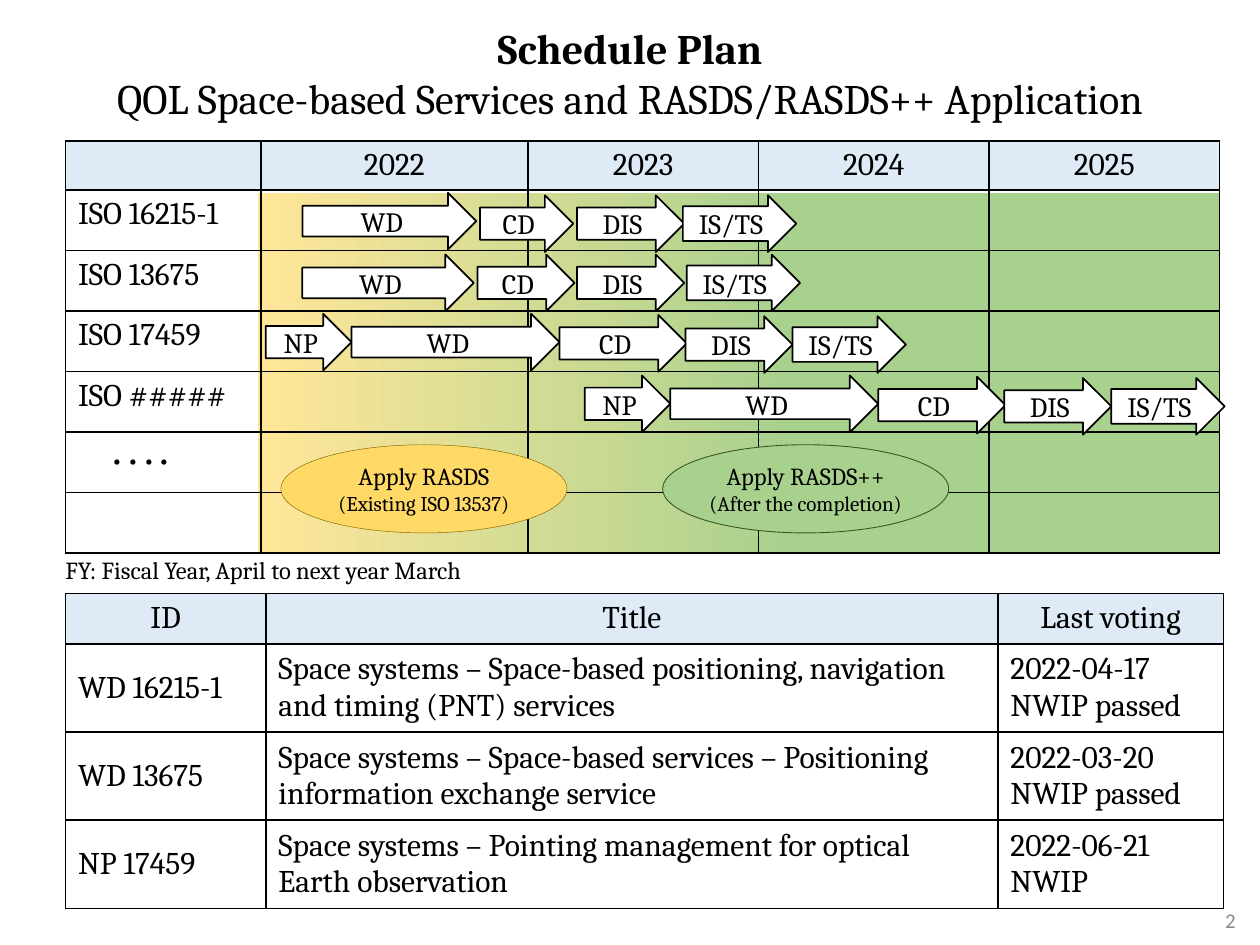
from lxml import etree
from pptx import Presentation
from pptx.dml.color import RGBColor
from pptx.enum.shapes import MSO_SHAPE
from pptx.enum.text import MSO_ANCHOR, MSO_AUTO_SIZE, PP_ALIGN
from pptx.oxml.ns import qn
from pptx.util import Inches, Pt

LEFT, CENTER = PP_ALIGN.LEFT, PP_ALIGN.CENTER
TOP, MIDDLE = MSO_ANCHOR.TOP, MSO_ANCHOR.MIDDLE
RECT, OVAL, ARROW = MSO_SHAPE.RECTANGLE, MSO_SHAPE.OVAL, MSO_SHAPE.RIGHT_ARROW
FONT, BLACK, GREEN, HEADER = "Cambria", "000000", "A9D18E", "DEEBF7"

# Content
TITLE = ["Schedule Plan", "QOL Space-based Services and RASDS/RASDS++ Application"]
SCHEDULE = [["", "2022", "2023", "2024", "2025"]] + [
    [name, "", "", "", ""] for name in
    ("ISO 16215-1", "ISO 13675", "ISO 17459", "ISO #####", "　････", "")]
VOTING = [
    ["ID", "Title", "Last voting"],
    ["WD 16215-1", "Space systems – Space-based positioning, navigation and timing (PNT) services",
     "2022-04-17\nNWIP passed"],
    ["WD 13675", "Space systems – Space-based services – Positioning information exchange service",
     "2022-03-20\nNWIP passed"],
    ["NP 17459", "Space systems – Pointing management for optical Earth observation",
     "2022-06-21\nNWIP"],
]
NOTE = "FY: Fiscal Year, April to next year March"

# Phase arrows: label, left, top, width
FULL_CYCLE = [("NP", 2.11, 2.49, 0.68), ("WD", 2.79, 2.49, 1.65), ("CD", 4.44, 2.5, 1.01),
              ("DIS", 5.44, 2.51, 0.85), ("IS/TS", 6.29, 2.51, 0.9)]
PHASES = [
    ("WD", 2.4, 1.53, 1.38), ("CD", 3.81, 1.55, 0.74),
    ("DIS", 4.58, 1.55, 0.85), ("IS/TS", 5.42, 1.55, 0.9),
    ("WD", 2.4, 2.02, 1.36), ("CD", 3.79, 2.02, 0.77),
    ("DIS", 4.58, 2.02, 0.85), ("IS/TS", 5.45, 2.02, 0.9),
] + FULL_CYCLE + [(label, x + 2.53, y + 0.49, w) for label, x, y, w in FULL_CYCLE]
SHAFT = {"WD": 0.54, "IS/TS": 0.61}  # other phases use 0.57

# Ellipses: left, lines, fill, line colour, line width
APPLY = [
    (2.23, ["Apply RASDS", "(Existing ISO 13537)"], "FFD966", "806000", 0.25),
    (5.26, ["Apply RASDS++", "(After the completion)"], GREEN, "385723", 0.5),
]


def rgb(value):
    return RGBColor.from_string(value)


def write(tf, lines, sizes, align=CENTER, anchor=MIDDLE, font=FONT, color=BLACK, bolds=(False,)):
    tf.vertical_anchor = anchor
    for i, line in enumerate(lines):
        p = tf.paragraphs[0] if i == 0 else tf.add_paragraph()
        p.alignment = align
        r = p.add_run()
        r.text = line
        r.font.name = font
        r.font.size = Pt(sizes[min(i, len(sizes) - 1)])
        r.font.bold = bolds[min(i, len(bolds) - 1)]
        r.font.color.rgb = rgb(color)


def add_shape(s, kind, x, y, w, h, fill=None, line=None, line_width=1):
    sp = s.shapes.add_shape(kind, Inches(x), Inches(y), Inches(w), Inches(h))
    sp.shadow.inherit = False
    if fill:
        sp.fill.solid()
        sp.fill.fore_color.rgb = rgb(fill)
    if line:
        sp.line.color.rgb = rgb(line)
        sp.line.width = Pt(line_width)
    else:
        sp.line.fill.background()
    return sp


def add_text(s, x, y, w, h, text, size, wrap=True, **style):
    tf = s.shapes.add_textbox(Inches(x), Inches(y), Inches(w), Inches(h)).text_frame
    tf.word_wrap = wrap
    write(tf, [text], [size], **style)


def set_borders(cell):
    tc_pr = cell._tc.get_or_add_tcPr()
    for i, side in enumerate(("lnL", "lnR", "lnT", "lnB")):
        ln = etree.Element(qn("a:" + side), w=str(Pt(1)))
        fill = etree.SubElement(ln, qn("a:solidFill"))
        etree.SubElement(fill, qn("a:srgbClr"), val=BLACK)
        tc_pr.insert(i, ln)


def add_table(s, x, y, widths, heights, rows, anchor):
    table = s.shapes.add_table(len(rows), len(widths), Inches(x), Inches(y),
                               Inches(sum(widths)), Inches(sum(heights))).table
    table.first_row = table.horz_banding = False
    for column, width in zip(table.columns, widths):
        column.width = Inches(width)
    for i, (row, height) in enumerate(zip(rows, heights)):
        table.rows[i].height = Inches(height)
        for j, text in enumerate(row):
            cell = table.cell(i, j)
            if i == 0:
                cell.fill.solid()
                cell.fill.fore_color.rgb = rgb(HEADER)
                cell.margin_top = cell.margin_bottom = Inches(0.03)
            else:
                cell.fill.background()
            set_borders(cell)
            cell.vertical_anchor = MIDDLE if i == 0 else anchor
            if text:
                write(cell.text_frame, text.split("\n"), [18], CENTER if i == 0 else LEFT,
                      None, "Calibri" if "･" in text else FONT)


def main():
    prs = Presentation()
    prs.slide_width, prs.slide_height = Inches(10), Inches(7.5)
    s = prs.slides.add_slide(prs.slide_layouts[5])

    # Title
    title = s.shapes.title
    title.left, title.top, title.width, title.height = map(Inches, (0, 0.12, 10, 0.91))
    title.text_frame.auto_size = MSO_AUTO_SIZE.NONE
    write(title.text_frame, TITLE, [24], bolds=(True, False))

    # Gradient behind the schedule years
    band = add_shape(s, RECT, 2.05, 1.53, 7.63, 2.85)
    band.fill.gradient()
    band.fill.gradient_angle = 0
    for stop, (position, color) in zip(band.fill.gradient_stops, [(0, "FFE699"), (0.55, GREEN)]):
        stop.position = position
        stop.color.rgb = rgb(color)

    # Tables
    add_table(s, 0.52, 1.12, [1.55, 2.12] + [1.83] * 3, [0.39] + [0.48] * 6, SCHEDULE, TOP)
    add_table(s, 0.52, 4.71, [1.59, 5.81, 1.79], [0.4] + [0.7] * 3, VOTING, MIDDLE)

    # Phase arrows
    for label, x, y, w in PHASES:
        sp = add_shape(s, ARROW, x, y, w, 0.45, "FFFFFF", BLACK)
        sp.adjustments[0] = SHAFT.get(label, 0.57)
        write(sp.text_frame, [label], [16])

    # Application ellipses
    for x, lines, fill, line, line_width in APPLY:
        sp = add_shape(s, OVAL, x, 3.53, 2.27, 0.7, fill, line, line_width)
        sp.text_frame.margin_left = sp.text_frame.margin_right = 0
        write(sp.text_frame, lines, [14, 12])

    # Note and page number
    add_text(s, 0.42, 4.36, 3.53, 0.34, NOTE, 14, wrap=False, align=LEFT, anchor=TOP)
    add_text(s, 9.53, 7.1, 0.47, 0.4, "2", 12, font="Calibri", color="8C8C8C")

    prs.save("out.pptx")


if __name__ == "__main__":
    main()
